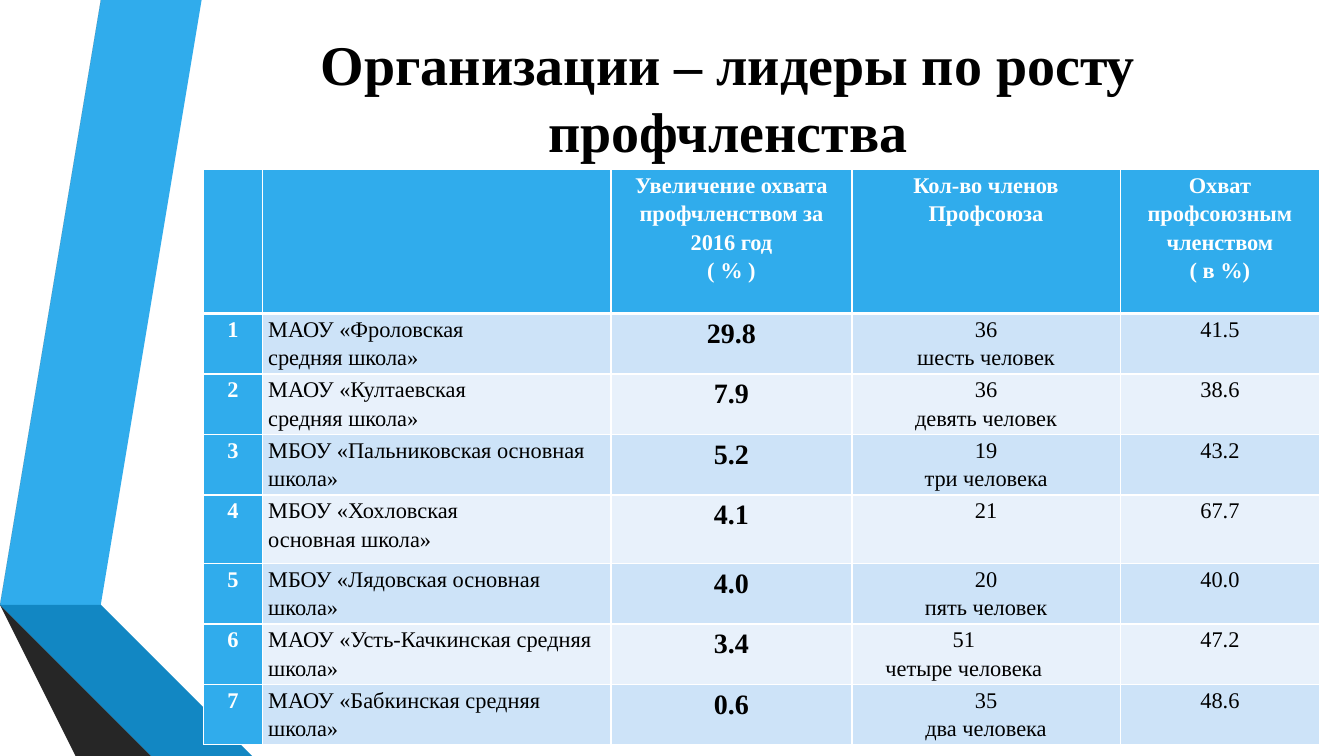
from lxml import etree
from pptx import Presentation
from pptx.dml.color import RGBColor
from pptx.enum import text
from pptx.oxml import ns
from pptx.util import Inches, Pt

FONT = "Times New Roman"
WHITE, BLACK, BLUE = "FFFFFF", "000000", "30ACEC"
BANDS = ["CDE3F8", "E8F1FB"]
CENTER, LEFT = text.PP_ALIGN.CENTER, text.PP_ALIGN.LEFT

# Ribbon outlines in inches, from back to front
RIBBONS = [
    (BLUE, [(0.5, 5.78), (0.77, 5.83), (1.73, 0), (1.45, 0)]),
    ("595959", [(1.39, 0), (1.11, 0), (0.16, 5.73), (0.44, 5.77)]),
    ("262626", [(0.16, 5.73), (1.45, 7.5), (1.51, 7.5)]),
    ("0C5A82", [(0.5, 5.79), (2.08, 7.5), (2.14, 7.5)]),
    ("1287C3", [(0.5, 5.78), (2.14, 7.5), (2.83, 7.5), (0.77, 5.83)]),
    ("404040", [(2.02, 7.5), (0.48, 5.83), (0.44, 5.77), (0.16, 5.73),
                (1.51, 7.5)]),
]

COL_WIDTHS = [0.58, 3.46, 2.39, 2.66, 1.98]
ROW_HEIGHTS = [1.43, 0.6, 0.6, 0.6, 0.68, 0.6, 0.6, 0.6]
HEADERS = [
    "",
    "",
    "Увеличение охвата профчленством за 2016 год\n( % )",
    "Кол-во членов Профсоюза",
    "Охват профсоюзным членством\n( в %)",
]
# School, growth in %, members, coverage in %
SCHOOLS = [
    ("МАОУ «Фроловская\nсредняя школа»", "29.8", "36\nшесть человек", "41.5"),
    ("МАОУ «Култаевская\nсредняя школа»", "7.9", "36\nдевять человек", "38.6"),
    ("МБОУ «Пальниковская основная школа»", "5.2", "19\nтри человека", "43.2"),
    ("МБОУ «Хохловская\nосновная школа»", "4.1", "21", "67.7"),
    ("МБОУ «Лядовская основная школа»", "4.0", "20\nпять человек", "40.0"),
    ("МАОУ «Усть-Качкинская средняя школа»", "3.4", "51\nчетыре человека",
     "47.2"),
    ("МАОУ «Бабкинская средняя школа»", "0.6", "35\nдва человека", "48.6"),
]


def rgb(value):
    return RGBColor.from_string(value)


def style_paragraph(p, size, color, bold, align):
    p.alignment = align
    p.font.name = FONT
    p.font.size = Pt(size)
    p.font.bold = bold
    p.font.color.rgb = rgb(color)


def add_ribbon(slide, color, points):
    builder = slide.shapes.build_freeform(*points[0], scale=Inches(1))
    builder.add_line_segments(points[1:], close=True)
    sp = builder.convert_to_shape()
    sp.shadow.inherit = False
    sp.fill.solid()
    sp.fill.fore_color.rgb = rgb(color)
    sp.line.fill.background()


def set_title(slide, wording):
    sp = slide.shapes.title
    sp.left, sp.top = Inches(1.74), Inches(0)
    sp.width, sp.height = Inches(10.96), Inches(1.92)
    tf = sp.text_frame
    tf.text = wording
    tf.word_wrap = True
    tf.auto_size = text.MSO_AUTO_SIZE.NONE
    tf.vertical_anchor = text.MSO_ANCHOR.MIDDLE
    style_paragraph(tf.paragraphs[0], 40, BLACK, True, CENTER)


def set_borders(cell, top, bottom):
    tc_pr = cell._tc.get_or_add_tcPr()
    widths = {"a:lnL": 1, "a:lnR": 1, "a:lnT": top, "a:lnB": bottom}
    for i, (tag, width) in enumerate(widths.items()):
        ln = etree.Element(ns.qn(tag), w=str(Pt(width)))
        fill = etree.SubElement(ln, ns.qn("a:solidFill"))
        etree.SubElement(fill, ns.qn("a:srgbClr"), val=WHITE)
        tc_pr.insert(i, ln)


def fill_cell(cell, wording, fill, size=16, color=BLACK, bold=False,
              align=CENTER):
    cell.margin_left = cell.margin_right = Inches(0.06)
    cell.margin_top = cell.margin_bottom = Inches(0)
    cell.fill.solid()
    cell.fill.fore_color.rgb = rgb(fill)
    cell.text = wording
    for p in cell.text_frame.paragraphs:
        style_paragraph(p, size, color, bold, align)
        p.line_spacing = 1.15


def add_leaders_table(slide):
    table = slide.shapes.add_table(
        len(ROW_HEIGHTS), len(COL_WIDTHS), Inches(2.02), Inches(1.68),
        Inches(sum(COL_WIDTHS)), Inches(sum(ROW_HEIGHTS))).table
    for column, width in zip(table.columns, COL_WIDTHS):
        column.width = Inches(width)
    for row, height in zip(table.rows, ROW_HEIGHTS):
        row.height = Inches(height)

    # Header row
    for c, header in enumerate(HEADERS):
        fill_cell(table.cell(0, c), header, BLUE, color=WHITE, bold=True)

    # One banded row per school
    for n, (school, growth, members, coverage) in enumerate(SCHOOLS, 1):
        band = BANDS[(n - 1) % 2]
        fill_cell(table.cell(n, 0), str(n), BLUE, color=WHITE, bold=True)
        fill_cell(table.cell(n, 1), school, band, align=LEFT)
        fill_cell(table.cell(n, 2), growth, band, size=20, bold=True)
        fill_cell(table.cell(n, 3), members, band)
        fill_cell(table.cell(n, 4), coverage, band)
    # The member count of row 6 sits left of centre
    table.cell(6, 3).margin_right = Inches(0.5)

    # White grid with a heavier rule under the header
    for r in range(len(ROW_HEIGHTS)):
        for c in range(len(COL_WIDTHS)):
            set_borders(table.cell(r, c), 3 if r == 1 else 1,
                        3 if r == 0 else 1)


def main():
    prs = Presentation()
    prs.slide_width, prs.slide_height = Inches(13.33), Inches(7.5)
    slide = prs.slides.add_slide(prs.slide_layouts[5])
    for color, points in RIBBONS:
        add_ribbon(slide, color, points)
    set_title(slide, "Организации – лидеры по росту профчленства")
    add_leaders_table(slide)
    prs.save("out.pptx")


if __name__ == "__main__":
    main()
